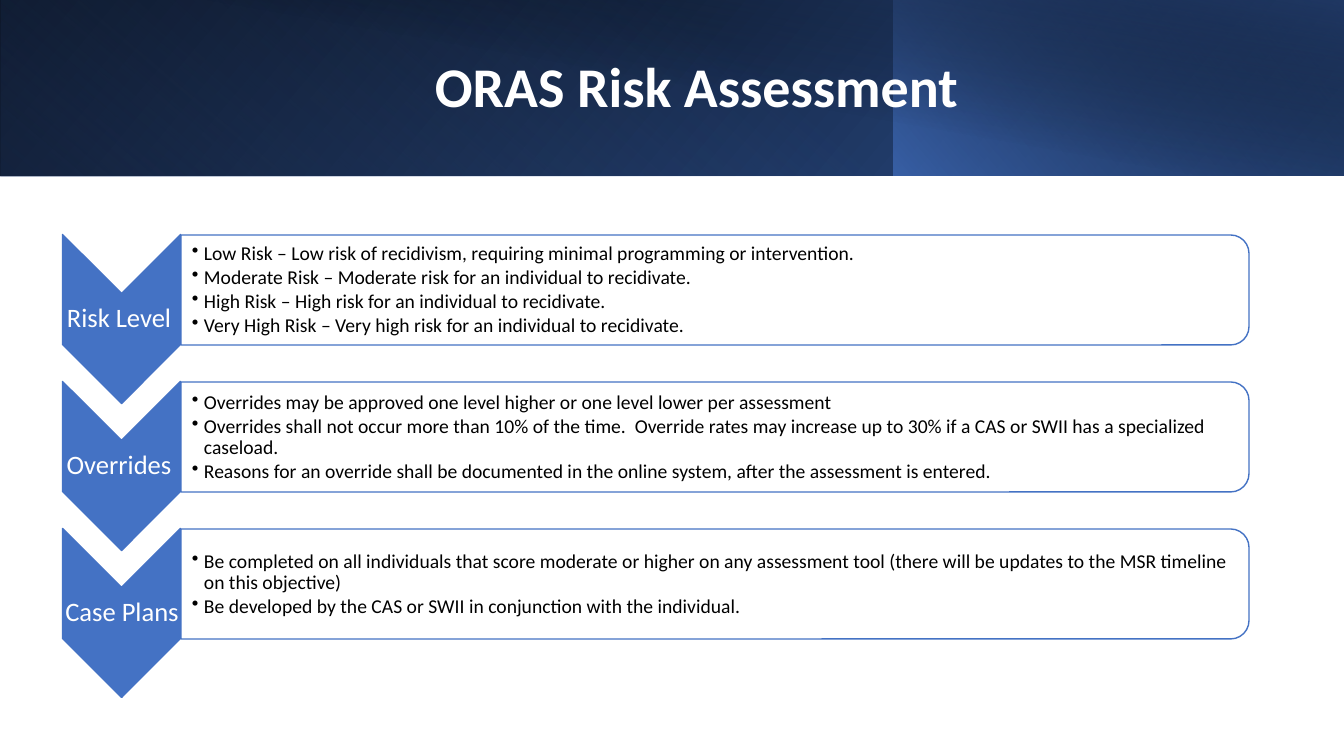
import pptx
import pptx.util
import pptx.dml.color
import pptx.enum.shapes
import pptx.enum.text
import pptx.oxml
import pptx.oxml.ns

PX = 9071.43  # EMU per px, 100.8 px to the inch
Pt = pptx.util.Pt
SHAPE = pptx.enum.shapes.MSO_SHAPE
ALIGN = pptx.enum.text.PP_ALIGN
NS = pptx.oxml.ns.nsdecls("a")
BLUE = pptx.dml.color.RGBColor(0x44, 0x72, 0xC4)
MID_BLUE = pptx.dml.color.RGBColor(0x2F, 0x55, 0x97)
NAVY = pptx.dml.color.RGBColor(0x20, 0x38, 0x64)
WHITE = pptx.dml.color.RGBColor(0xFF, 0xFF, 0xFF)
BLACK = pptx.dml.color.RGBColor(0, 0, 0)

# left, top, width, height, flipped, rotation, angle, stops (position, colour, opacity)
BANDS = [
    (0, 0, 1344, 176, True, 0, 140, [(0, BLACK, 100), (100, MID_BLUE, 100)]),
    (0, 0, 895, 176, True, 180, 230, [(20, BLUE, 0), (100, NAVY, 55)]),
    (894, 0, 450, 176, True, 0, 220, [(0, BLUE, 66), (100, BLACK, 30)]),
    (50, 0, 1294, 176, False, 0, 280, [(50, BLACK, 0), (99, NAVY, 52)]),
]
SECTIONS = [
    ("Risk Level ", [
        "Low Risk – Low risk of recidivism, requiring minimal programming or intervention.",
        "Moderate Risk – Moderate risk for an individual to recidivate.",
        "High Risk – High risk for an individual to recidivate.",
        "Very High Risk – Very high risk for an individual to recidivate.",
    ]),
    ("Overrides ", [
        "Overrides may be approved one level higher or one level lower per assessment",
        "Overrides shall not occur more than 10% of the time.  Override rates may increase "
        "up to 30% if a CAS or SWII has a specialized caseload.",
        "Reasons for an override shall be documented in the online system, "
        "after the assessment is entered.",
    ]),
    ("Case Plans ", [
        "Be completed on all individuals that score moderate or higher on any assessment tool "
        "(there will be updates to the MSR timeline on this objective)",
        "Be developed by the CAS or SWII in conjunction with the individual.",
    ]),
]
SECTION_STEP = 147

prs = pptx.Presentation()
prs.slide_width, prs.slide_height = round(1344 * PX), round(756 * PX)
s = prs.slides.add_slide(prs.slide_layouts[6])


def add_block(kind, box, rotation=0):
    sp = s.shapes.add_shape(kind, *(round(v * PX) for v in box))
    sp.shadow.inherit = False
    sp.rotation = rotation
    return sp


def add_text(box, lines, size, color, align, inset=1, bold=False):
    """Add a vertically centred text box and return its paragraphs."""
    tf = s.shapes.add_textbox(*(round(v * PX) for v in box)).text_frame
    tf.word_wrap = True
    tf.vertical_anchor = pptx.enum.text.MSO_ANCHOR.MIDDLE
    tf.margin_left = round(inset * PX)
    tf.margin_top = tf.margin_right = tf.margin_bottom = round(PX)
    tf.text = "\n".join(lines)
    for p in tf.paragraphs:
        p.alignment = align
        p.line_spacing = 0.9
        font = p.runs[0].font
        font.name, font.size, font.bold = "Calibri", Pt(size), bold
        font.color.rgb = color
    return tf.paragraphs


# Header
for *box, flipped, rotation, angle, stops in BANDS:
    sp = add_block(SHAPE.RECTANGLE, box, rotation)
    sp.line.fill.background()
    spPr = sp._element.spPr
    if flipped:
        spPr.xfrm.set("flipH", "1")
    stop_xml = "".join(
        f'<a:gs pos="{pos * 1000}"><a:srgbClr val="{color}">'
        f'<a:alpha val="{opacity * 1000}"/></a:srgbClr></a:gs>'
        for pos, color, opacity in stops)
    spPr.prstGeom.addnext(pptx.oxml.parse_xml(
        f'<a:gradFill {NS}><a:gsLst>{stop_xml}</a:gsLst>'
        f'<a:lin ang="{angle * 60000}" scaled="0"/></a:gradFill>'))
add_text((151, 32, 1091, 114), ["ORAS Risk Assessment"], 40, WHITE, ALIGN.CENTER, bold=True)

# Sections
for i, (label, bullets) in enumerate(SECTIONS):
    y = i * SECTION_STEP
    chevron = add_block(SHAPE.CHEVRON, (37, 260 + y, 169, 118), 90)
    panel = add_block(SHAPE.ROUND_2_SAME_RECTANGLE, (660, -244 + y, 110, 1068), 90)
    for sp, color in ((chevron, BLUE), (panel, WHITE)):
        sp.fill.solid()
        sp.fill.fore_color.rgb = color
        sp.line.color.rgb = BLUE
        sp.line.width = Pt(1)
    panel_color = panel._element.spPr.find(pptx.oxml.ns.qn("a:solidFill"))[0]
    panel_color.append(pptx.oxml.parse_xml(f'<a:alpha {NS} val="90000"/>'))

    add_text((63, 294 + y, 118, 50), [label], 19, WHITE, ALIGN.CENTER)
    for p in add_text((181, 241 + y, 1063, 99), bullets, 14, BLACK, ALIGN.LEFT, inset=11):
        p.space_after = Pt(2)
        pPr = p._p.get_or_add_pPr()
        pPr.set("marL", str(round(12 * PX)))
        pPr.set("indent", str(round(-12 * PX)))
        pPr.append(pptx.oxml.parse_xml(f'<a:buChar {NS} char="•"/>'))

prs.save("out.pptx")
